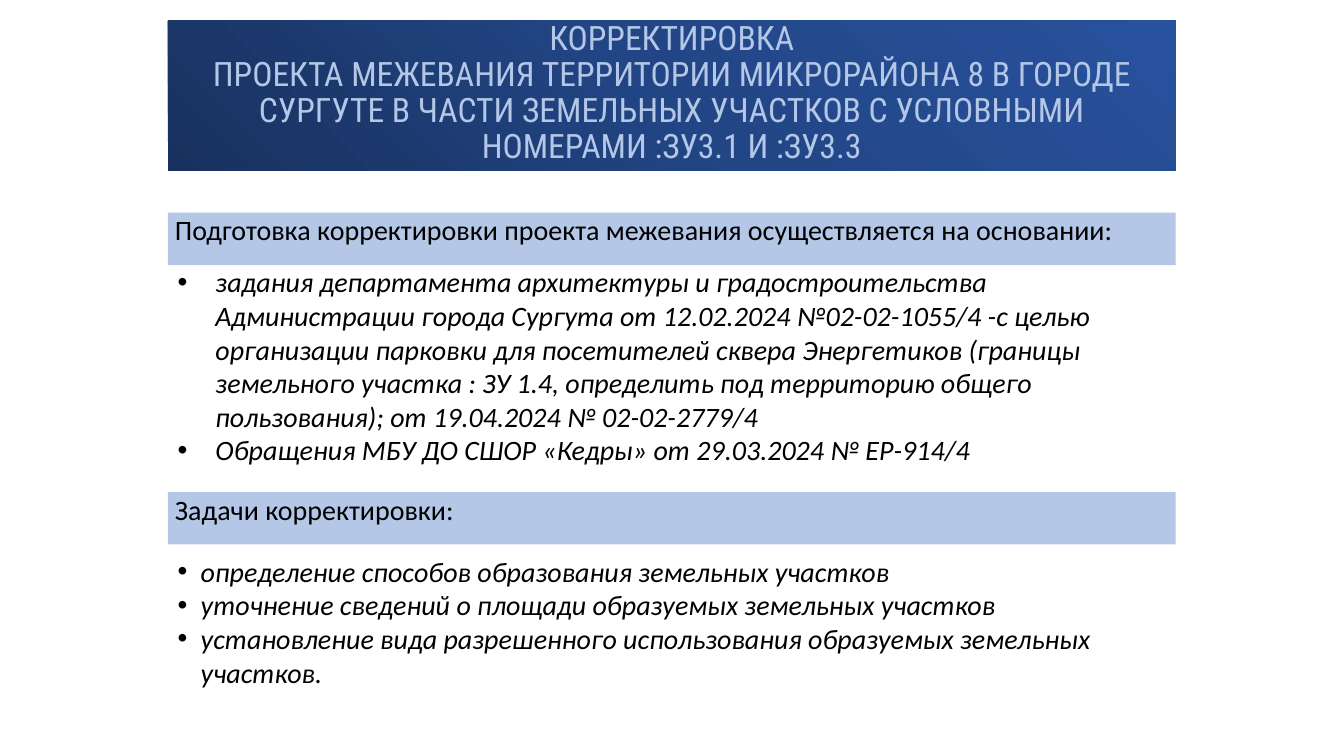
from copy import deepcopy
from dataclasses import dataclass

from lxml.etree import SubElement
from pptx import Presentation
from pptx.dml.color import RGBColor
from pptx.enum.shapes import MSO_SHAPE
from pptx.enum.text import MSO_ANCHOR, PP_ALIGN
from pptx.oxml.ns import qn
from pptx.shapes.autoshape import Shape
from pptx.slide import Slide
from pptx.util import Cm, Pt


@dataclass(frozen=True)
class Theme:
    pale: RGBColor = RGBColor(0xB4, 0xC7, 0xE7)
    ink: RGBColor = RGBColor(0, 0, 0)
    # Banner gradient, dark to light
    blues: tuple[str, ...] = ("18315E", "224585", "28529E")
    head: str = "Roboto Condensed"
    body: str = "Calibri"
    big: Pt = Pt(24)
    size: Pt = Pt(20)


@dataclass(frozen=True)
class Part:
    """A headed section: a pale bar and the bullet list below it."""
    title: str
    items: tuple[str, ...]
    bar: float
    top: float
    high: float
    indent: float


THEME = Theme()
LEFT, WIDE, LIST = 4.23, 25.4, 23.83
TITLE = (
    "КОРРЕКТИРОВКА\v"
    "ПРОЕКТА МЕЖЕВАНИЯ ТЕРРИТОРИИ МИКРОРАЙОНА 8 В ГОРОДЕ СУРГУТЕ "
    "В ЧАСТИ ЗЕМЕЛЬНЫХ УЧАСТКОВ С УСЛОВНЫМИ НОМЕРАМИ :ЗУ3.1 И :ЗУ3.3"
)
PARTS = (
    Part(
        "Подготовка корректировки проекта межевания осуществляется на основании:",
        (
            "задания департамента архитектуры и градостроительства "
            "Администрации города Сургута от 12.02.2024 №02-02-1055/4 -с целью "
            "организации парковки для посетителей сквера Энергетиков (границы "
            "земельного участка : ЗУ 1.4, определить под территорию общего "
            "пользования); от 19.04.2024 № 02-02-2779/4",
            "Обращения МБУ ДО СШОР «Кедры» от 29.03.2024 № ЕР-914/4",
        ),
        bar=5.36, top=6.55, high=5.38, indent=0.95,
    ),
    Part(
        "Задачи корректировки:",
        (
            "определение способов образования земельных участков",
            "уточнение сведений о площади образуемых земельных участков",
            "установление вида разрешенного использования образуемых "
            "земельных участков.",
        ),
        bar=12.4, top=13.84, high=3.68, indent=0.58,
    ),
)


def add_box(slide: Slide, top: float, high: float, text: str) -> Shape:
    """Add a full-width rectangle with no line or shadow."""
    box = slide.shapes.add_shape(
        MSO_SHAPE.RECTANGLE, Cm(LEFT), Cm(top), Cm(WIDE), Cm(high))
    box.shadow.inherit = False
    box.line.fill.background()
    box.text_frame.word_wrap = True
    para = box.text_frame.paragraphs[0]
    para.text = text
    para.line_spacing = 0.9
    return box


def add_banner(slide: Slide) -> None:
    box = add_box(slide, 0.53, 3.78, TITLE)
    box.fill.gradient()
    box.fill.gradient_angle = 45
    # Third gradient stop, then even positions
    first = box.fill.gradient_stops[0]._gs
    first.addnext(deepcopy(first))
    stops = box.fill.gradient_stops
    for i, (stop, tone) in enumerate(zip(stops, THEME.blues)):
        stop.color.rgb = RGBColor.from_string(tone)
        stop.position = i / (len(THEME.blues) - 1)
    box.text_frame.vertical_anchor = MSO_ANCHOR.BOTTOM
    para = box.text_frame.paragraphs[0]
    para.alignment = PP_ALIGN.CENTER
    para.font.name, para.font.size = THEME.head, THEME.big
    para.font.color.rgb = THEME.pale


def add_bar(slide: Slide, part: Part) -> None:
    box = add_box(slide, part.bar, 1.32, part.title)
    box.fill.solid()
    box.fill.fore_color.rgb = THEME.pale
    frame = box.text_frame
    frame.vertical_anchor = MSO_ANCHOR.TOP
    frame.margin_left = frame.margin_right = Cm(0.18)
    frame.margin_top = frame.margin_bottom = Cm(0.1)
    para = frame.paragraphs[0]
    para.alignment = PP_ALIGN.LEFT
    para.space_before = Pt(10)
    para.font.name, para.font.size = THEME.body, THEME.size
    para.font.color.rgb = THEME.ink


def add_list(slide: Slide, part: Part) -> None:
    box = slide.shapes.add_textbox(
        Cm(LEFT), Cm(part.top), Cm(LIST), Cm(part.high))
    frame = box.text_frame
    frame.word_wrap = True
    frame.text = "\n".join(part.items)
    for para in frame.paragraphs:
        # Hanging indent and bullet
        props = para._p.get_or_add_pPr()
        props.set("marL", str(Cm(part.indent)))
        props.set("indent", str(-Cm(part.indent)))
        SubElement(props, qn("a:buFont"), typeface="Arial")
        SubElement(props, qn("a:buChar"), char="•")
        para.font.name, para.font.size = THEME.body, THEME.size
        para.font.italic = True
        para.font.color.rgb = THEME.ink


def main() -> None:
    deck = Presentation()
    deck.slide_width, deck.slide_height = Cm(33.87), Cm(19.05)
    slide = deck.slides.add_slide(deck.slide_layouts[6])
    add_banner(slide)
    for part in PARTS:
        add_bar(slide, part)
        add_list(slide, part)
    deck.save("out.pptx")


if __name__ == "__main__":
    main()
